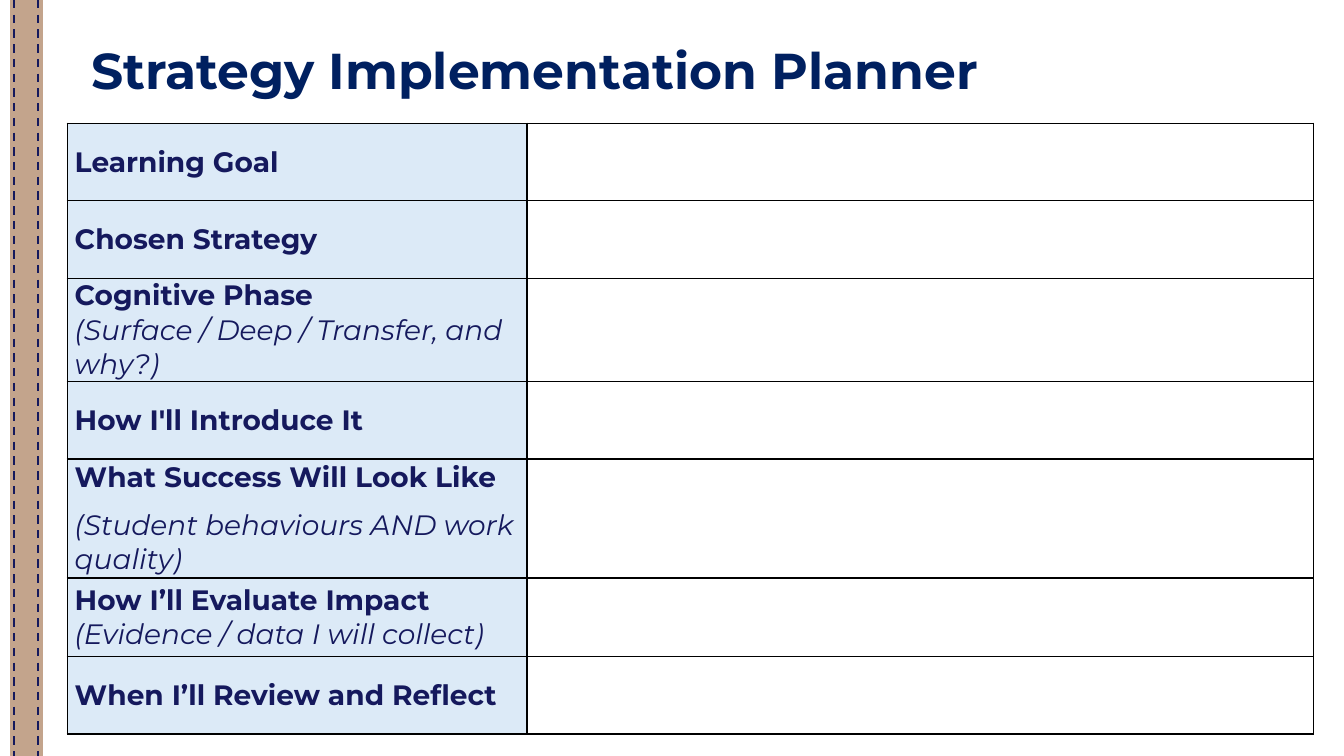
import pptx
import pptx.dml.color
import pptx.enum.dml
import pptx.enum.shapes
import pptx.enum.text
import pptx.oxml
import pptx.oxml.ns
import pptx.util

Pt = pptx.util.Pt
NAVY, TITLE, TAN, PALE, WHITE = "15195D", "002060", "C3A48C", "DCEAF7", "FFFFFF"
BOLD, SLANT = (True, False), (False, True)


def paint(target, color):
    target.rgb = pptx.dml.color.RGBColor.from_string(color)


def fill(part, color):
    part.fill.solid()
    paint(part.fill.fore_color, color)


class Page:
    face = "Montserrat"

    def __init__(self, deck):
        self.slide = deck.slides.add_slide(deck.slide_layouts[5])
        self.shapes = self.slide.shapes

    def style(self, run, size, color, look):
        run.font.name = self.face
        run.font.size = Pt(size)
        run.font.bold, run.font.italic = look
        paint(run.font.color, color)

    def title(self, text, left, top, width, height):
        box = self.shapes.title
        box.left, box.top, box.width, box.height = map(Pt, (left, top, width, height))
        frame = box.text_frame
        frame.text = text
        frame.word_wrap = True
        frame.auto_size = pptx.enum.text.MSO_AUTO_SIZE.NONE
        frame.vertical_anchor = pptx.enum.text.MSO_ANCHOR.TOP
        para = frame.paragraphs[0]
        para.alignment = pptx.enum.text.PP_ALIGN.LEFT
        para.line_spacing = 0.9
        para.space_before = Pt(0)
        self.style(para.runs[0], 36, TITLE, BOLD)

    def band(self, left, top, width, height):
        kind = pptx.enum.shapes.MSO_SHAPE.RECTANGLE
        shape = self.shapes.add_shape(kind, *map(Pt, (left, top, width, height)))
        shape.shadow.inherit = False
        fill(shape, TAN)
        paint(shape.line.color, TAN)
        shape.line.width = Pt(0.75)

    def stitch(self, left, height):
        kind = pptx.enum.shapes.MSO_CONNECTOR.STRAIGHT
        line = self.shapes.add_connector(kind, *map(Pt, (left, 0, left, height)))
        paint(line.line.color, NAVY)
        line.line.width = Pt(1.5)
        line.line.dash_style = pptx.enum.dml.MSO_LINE.DASH
        pptx.oxml.ns.qn("a:effectLst")
        line._element.spPr.append(pptx.oxml.parse_xml(
            f'<a:effectLst {pptx.oxml.ns.nsdecls("a")}/>'))

    def frame(self, cell, color):
        props = cell._tc.get_or_add_tcPr()
        for side in "LRTB":
            props.append(pptx.oxml.parse_xml(
                f'<a:ln{side} {pptx.oxml.ns.nsdecls("a")} w="{Pt(1)}"><a:solidFill>'
                f'<a:srgbClr val="000000"/></a:solidFill></a:ln{side}>'))
        fill(cell, color)

    def label(self, cell, paras, gap):
        cell.vertical_anchor = pptx.enum.text.MSO_ANCHOR.MIDDLE
        cell.margin_left = cell.margin_right = Pt(5.4)
        cell.margin_top = cell.margin_bottom = 0
        for spot, parts in enumerate(paras):
            frame = cell.text_frame
            para = frame.add_paragraph() if spot else frame.paragraphs[0]
            para.space_after = Pt(gap)
            for text, look in parts:
                run = para.add_run()
                run.text = text
                self.style(run, 20, NAVY, look)

    def table(self, rows, left, top, widths):
        size = sum(widths), sum(row[0] for row in rows)
        grid = self.shapes.add_table(
            len(rows), len(widths), *map(Pt, (left, top, *size))).table
        grid.first_row = grid.horz_banding = False
        for col, width in zip(grid.columns, widths):
            col.width = Pt(width)
        for line, (height, gap, paras) in zip(grid.rows, rows):
            line.height = Pt(height)
            for cell, color in zip(line.cells, (PALE, WHITE)):
                self.frame(cell, color)
            self.label(line.cells[0], paras, gap)


ROWS = [
    (55.5, 10, [[("Learning Goal", BOLD)]]),
    (55.5, 10, [[("Chosen Strategy", BOLD)]]),
    (73.5, 0, [[("Cognitive Phase", BOLD)],
               [("(Surface / Deep / Transfer, and why?)", SLANT)]]),
    (55.5, 10, [[("How I'll Introduce It", BOLD)]]),
    (85, 10, [[("What Success Will Look Like", BOLD)],
              [("(Student behaviours AND work quality)", SLANT)]]),
    (56, 10, [[("How I’ll Evaluate Impact ", BOLD),
               ("(Evidence / data I will collect)", SLANT)]]),
    (55.5, 10, [[("When I’ll Review and Reflect", BOLD)]]),
]

deck = pptx.Presentation()
deck.slide_width, deck.slide_height = Pt(960), Pt(540)
page = Page(deck)
page.band(7.5, 0, 23, 540)
for left in (10, 27.3):
    page.stitch(left, 540)
page.title("Strategy Implementation Planner", 58, 29.5, 838, 58)
page.table(ROWS, 48, 88, (328.5, 562))
deck.save("out.pptx")
